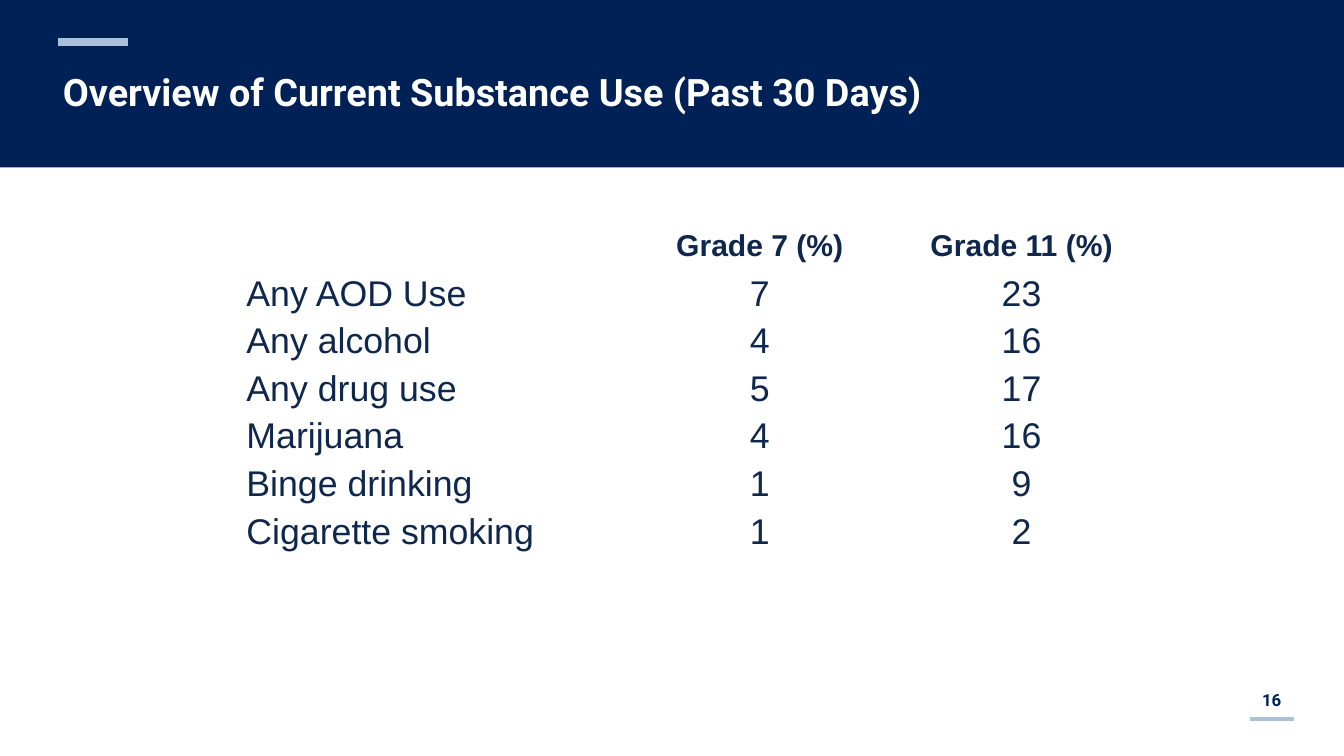
import pptx
import pptx.dml.color
import pptx.enum.shapes
import pptx.enum.text
import pptx.oxml.ns
import pptx.util
from lxml import etree

Pt = pptx.util.Pt
RGBColor = pptx.dml.color.RGBColor
ALIGN = pptx.enum.text.PP_ALIGN
ANCHOR = pptx.enum.text.MSO_ANCHOR

NAVY = RGBColor(0x00, 0x21, 0x56)
INK = RGBColor(0x0F, 0x26, 0x4D)
PALE_BLUE = RGBColor(0xAB, 0xC1, 0xDA)
WHITE = RGBColor(0xFF, 0xFF, 0xFF)

TITLE_FONT = {"name": "Roboto", "size": Pt(54), "bold": True}
NUMBER_FONT = {"name": "Roboto", "size": Pt(24), "bold": True}
HEADER_FONT = {"name": "Arial", "size": Pt(43), "bold": True}
BODY_FONT = {"name": "Arial", "size": Pt(51), "bold": False}
CELL_FORMAT = {
    "vertical_anchor": ANCHOR.MIDDLE,
    "margin_top": Pt(1.44),
    "margin_right": Pt(1.44),
    "margin_bottom": Pt(0),
}

COLUMN_WIDTHS = [578.9, 367.9, 380.2]
ROW_HEIGHT = 67.9
USE_ROWS = [
    ("", "Grade 7 (%)", "Grade 11 (%)"),
    ("Any AOD Use", "7", "23"),
    ("Any alcohol", "4", "16"),
    ("Any drug use", "5", "17"),
    ("Marijuana", "4", "16"),
    ("Binge drinking", "1", "9"),
    ("Cigarette smoking", "1", "2"),
]


def apply_format(target, values):
    for attribute, value in values.items():
        setattr(target, attribute, value)


def write_text(frame, text, font, color, align):
    paragraph = frame.paragraphs[0]
    paragraph.alignment = align
    run = paragraph.add_run()
    run.text = text
    apply_format(run.font, font)
    run.font.color.rgb = color
    return paragraph


def add_band(slide, width, height):
    band = slide.shapes.add_shape(
        pptx.enum.shapes.MSO_SHAPE.RECTANGLE, 0, 0, Pt(width), Pt(height))
    band.shadow.inherit = False
    band.fill.solid()
    band.fill.fore_color.rgb = NAVY
    band.line.fill.background()


def add_rule(slide, left, right, y, weight):
    rule = slide.shapes.add_connector(
        pptx.enum.shapes.MSO_CONNECTOR.STRAIGHT, Pt(left), Pt(y), Pt(right), Pt(y))
    rule.line.color.rgb = PALE_BLUE
    rule.line.width = Pt(weight)
    properties = rule._element.spPr
    etree.SubElement(properties, pptx.oxml.ns.qn("a:effectLst"))


def add_label(slide, box, text, font, color, align, anchor):
    frame = slide.shapes.add_textbox(*map(Pt, box)).text_frame
    apply_format(frame, {"word_wrap": True, "vertical_anchor": anchor})
    return write_text(frame, text, font, color, align)


def add_use_table(slide, left, top):
    table = slide.shapes.add_table(
        len(USE_ROWS), len(COLUMN_WIDTHS), Pt(left), Pt(top),
        Pt(sum(COLUMN_WIDTHS)), Pt(ROW_HEIGHT * len(USE_ROWS))).table
    apply_format(table, {"first_row": False, "horz_banding": False})
    for column, width in zip(table.columns, COLUMN_WIDTHS):
        column.width = Pt(width)
    for r, values in enumerate(USE_ROWS):
        table.rows[r].height = Pt(ROW_HEIGHT)
        for c, value in enumerate(values):
            cell = table.cell(r, c)
            cell.fill.background()
            apply_format(cell, CELL_FORMAT)
            cell.margin_left = Pt(1.44 if c else 29.5)
            if value:
                write_text(cell.text_frame, value, BODY_FONT if r else HEADER_FONT,
                           INK, ALIGN.CENTER if c else ALIGN.LEFT)


def main():
    deck = pptx.Presentation()
    apply_format(deck, {"slide_width": Pt(1920.24), "slide_height": Pt(1080)})
    slide = deck.slides.add_slide(deck.slide_layouts[6])

    # Header band with accent and title
    add_band(slide, 1920.24, 239)
    add_rule(slide, 82.8, 182.2, 59.8, 11)
    title = add_label(slide, (82.8, 90.7, 1756.8, 123.8),
                      "Overview of Current Substance Use (Past 30 Days)",
                      TITLE_FONT, WHITE, ALIGN.LEFT, ANCHOR.TOP)
    title.line_spacing = 1.05

    # Substance use by grade
    add_use_table(slide, 322.6, 317.5)

    # Page number
    add_label(slide, (1785.6, 971.3, 62.6, 57.6), "16",
              NUMBER_FONT, NAVY, ALIGN.CENTER, ANCHOR.MIDDLE)
    add_rule(slide, 1785.6, 1848.2, 1027.4, 5)

    deck.save("out.pptx")


if __name__ == "__main__":
    main()
